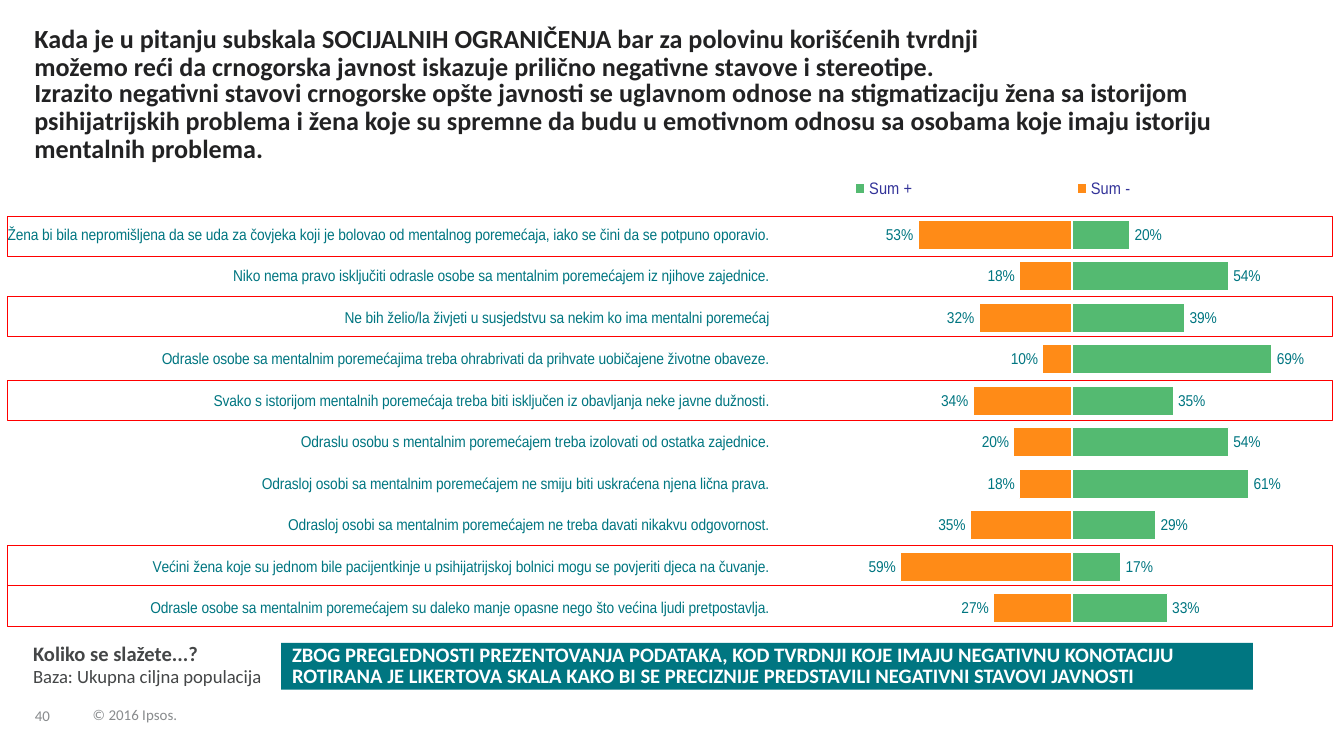
from lxml import etree
from pptx import Presentation
from pptx.chart.data import CategoryChartData
from pptx.dml.color import RGBColor
from pptx.enum.chart import XL_CHART_TYPE as CT
from pptx.enum.chart import XL_LABEL_POSITION as LP
from pptx.enum.chart import XL_LEGEND_POSITION as LEG
from pptx.enum.chart import XL_TICK_LABEL_POSITION as TLP
from pptx.enum.chart import XL_TICK_MARK as TM
from pptx.enum.shapes import MSO_SHAPE
from pptx.enum.text import MSO_ANCHOR, PP_ALIGN
from pptx.oxml.ns import qn
from pptx.util import Pt

TEAL = RGBColor(0x00, 0x76, 0x81)
GREEN = RGBColor(0x54, 0xBA, 0x71)
ORANGE = RGBColor(0xFF, 0x8B, 0x17)
NAVY = RGBColor(0x33, 0x33, 0x99)
INK = RGBColor(0x22, 0x22, 0x23)
SLATE = RGBColor(0x44, 0x46, 0x47)
GREY = RGBColor(0x88, 0x8B, 0x8D)
RED = RGBColor(0xFF, 0x00, 0x00)
WHITE = RGBColor(0xFF, 0xFF, 0xFF)

HEADING = dict(size=Pt(14), bold=True, color=INK)
QUESTION = dict(size=Pt(11), bold=True, color=SLATE)
BASE = dict(size=Pt(10), bold=False, color=SLATE)
BANNER = dict(size=Pt(11), bold=True, color=WHITE)
FOOTER = dict(size=Pt(8), bold=False, color=GREY)

TOP, MIDDLE, BOTTOM = MSO_ANCHOR.TOP, MSO_ANCHOR.MIDDLE, MSO_ANCHOR.BOTTOM

# (left, top, width, height), anchor, line spacing, wrap, lines of (text, format)
TEXTS = [
    ((18.4, 13.7, 516, 30), TOP, 0.9, True, [(
        "Kada je u pitanju subskala SOCIJALNIH OGRANIČENJA bar za polovinu "
        "korišćenih tvrdnji možemo reći da crnogorska javnost iskazuje "
        "prilično negativne stavove i stereotipe.", HEADING)]),
    ((18.4, 42.8, 684, 46), TOP, 0.9, True, [(
        "Izrazito negativni stavovi crnogorske opšte javnosti se uglavnom "
        "odnose na stigmatizaciju žena sa istorijom psihijatrijskih problema "
        "i žena koje su spremne da budu u emotivnom odnosu sa osobama koje "
        "imaju istoriju mentalnih problema.", HEADING)]),
    ((17.7, 344.5, 218, 25), TOP, 0.95, True, [
        ("Koliko se slažete...?", QUESTION),
        ("Baza: Ukupna ciljna populacija", BASE)]),
    ((18.7, 369.2, 24.5, 18.7), BOTTOM, 0.85, False, [("40", FOOTER)]),
    ((49.7, 374.4, 54.7, 13), BOTTOM, 0.85, False, [("© 2016 Ipsos.", FOOTER)]),
]
BANNER_BOX = (150.7, 344.5, 520.6, 25)
BANNER_TEXT = (
    "ZBOG PREGLEDNOSTI PREZENTOVANJA PODATAKA, KOD TVRDNJI KOJE IMAJU "
    "NEGATIVNU KONOTACIJU ROTIRANA JE LIKERTOVA SKALA KAKO BI SE PRECIZNIJE "
    "PREDSTAVILI NEGATIVNI STAVOVI JAVNOSTI")

# statement, Sum -, Sum +, top of the red frame if there is one
STATEMENTS = [
    ("Žena bi bila nepromišljena da se uda za čovjeka koji je bolovao od "
     "mentalnog poremećaja, iako se čini da se potpuno oporavio.", 53, 20, 115.8),
    ("Niko nema pravo isključiti odrasle osobe sa mentalnim poremećajem iz "
     "njihove zajednice.", 18, 54, None),
    ("Ne bih želio/la živjeti u susjedstvu sa nekim ko ima mentalni poremećaj",
     32, 39, 158.6),
    ("Odrasle osobe sa mentalnim poremećajima treba ohrabrivati da prihvate "
     "uobičajene životne obaveze.", 10, 69, None),
    ("Svako s istorijom mentalnih poremećaja treba biti isključen iz "
     "obavljanja neke javne dužnosti.", 34, 35, 203.7),
    ("Odraslu osobu s mentalnim poremećajem treba izolovati od ostatka "
     "zajednice.", 20, 54, None),
    ("Odrasloj osobi sa mentalnim poremećajem ne smiju biti uskraćena njena "
     "lična prava.", 18, 61, None),
    ("Odrasloj osobi sa mentalnim poremećajem ne treba davati nikakvu "
     "odgovornost.", 35, 29, None),
    ("Većini žena koje su jednom bile pacijentkinje u psihijatrijskoj bolnici "
     "mogu se povjeriti djeca na čuvanje.", 59, 17, 292.1),
    ("Odrasle osobe sa mentalnim poremećajem su daleko manje opasne nego što "
     "većina ljudi pretpostavlja.", 27, 33, 313.8),
]
SERIES_STYLES = [(ORANGE, '0"%";0"%"'), (GREEN, '0"%"')]
CHART_BOX = (4, 90, 725.8, 248.6)
PLOT_LAYOUT = dict(layoutTarget="inner", xMode="edge", yMode="edge",
                   x=0.513, y=0.099, w=0.488, h=0.895)
LEGEND_LAYOUT = dict(xMode="edge", yMode="edge", x=0.44, y=0.01, w=0.5, h=0.07)
FRAME_LEFT, FRAME_WIDTH, FRAME_HEIGHT = 4, 710, 21.7


def points(box):
    return [Pt(v) for v in box]


def style_font(font, color, **fmt):
    for key, value in fmt.items():
        setattr(font, key, value)
    font.color.rgb = color


def write(tf, lines, anchor, spacing, wrap=True, inset=0):
    for side in ("left", "top", "right", "bottom"):
        setattr(tf, f"margin_{side}", 0)
    tf.margin_left = Pt(inset)
    tf.vertical_anchor, tf.word_wrap = anchor, wrap
    p = tf.paragraphs[0]
    p.alignment, p.line_spacing = PP_ALIGN.LEFT, spacing
    for i, (text, fmt) in enumerate(lines):
        if i:
            p.add_line_break()
        r = p.add_run()
        r.text = text
        style_font(r.font, name="Calibri", **fmt)


def set_layout(parent, after, values):
    """Give a plot area or legend a manual layout, placed after the named child."""
    for old in parent.findall(qn("c:layout")):
        parent.remove(old)
    layout = etree.Element(qn("c:layout"))
    manual = etree.SubElement(layout, qn("c:manualLayout"))
    for key, value in values.items():
        etree.SubElement(manual, qn(f"c:{key}")).set("val", str(value))
    previous = parent.find(qn(after)) if after else None
    parent.insert(0 if previous is None else parent.index(previous) + 1, layout)


def add_rect(s, box):
    sp = s.shapes.add_shape(MSO_SHAPE.RECTANGLE, *points(box))
    sp.shadow.inherit = False
    return sp


def add_statement_chart(s):
    names, minus, plus, _ = zip(*STATEMENTS)
    data = CategoryChartData()
    data.categories = names
    data.add_series("Sum -", [-v for v in minus])
    data.add_series("Sum +", plus)
    chart = s.shapes.add_chart(CT.BAR_CLUSTERED, *points(CHART_BOX), data).chart
    chart.has_title = False
    style_font(chart.font, NAVY, name="Arial", size=Pt(9.7))

    chart.has_legend = True
    legend = chart.legend
    legend.position, legend.include_in_layout = LEG.TOP, False
    style_font(legend.font, NAVY, name="Arial", size=Pt(8.9))
    set_layout(legend._element, "c:legendPos", LEGEND_LAYOUT)

    axis = chart.category_axis
    axis.reverse_order = True
    axis.tick_label_position = TLP.LOW
    axis.major_tick_mark = TM.OUTSIDE
    axis.format.line.fill.background()
    style_font(axis.tick_labels.font, TEAL, name="Arial", size=Pt(8.4))
    body = axis._element.find(qn("c:txPr")).find(qn("a:bodyPr"))
    body.set("rot", "0")
    body.set("vert", "horz")

    values = chart.value_axis
    values.minimum_scale, values.maximum_scale = -100, 100
    values.has_major_gridlines = False
    values.visible = False

    plot = chart.plots[0]
    plot.gap_width, plot.overlap, plot.vary_by_categories = 40, 100, False
    for series, (color, number_format) in zip(plot.series, SERIES_STYLES):
        series.invert_if_negative = False
        series.format.fill.solid()
        series.format.fill.fore_color.rgb = color
        series.format.line.color.rgb = WHITE
        series.format.line.width = Pt(1)
        labels = series.data_labels
        labels.show_value, labels.position = True, LP.OUTSIDE_END
        labels.number_format, labels.number_format_is_linked = number_format, False
        style_font(labels.font, TEAL, name="Arial", size=Pt(8.4))
    set_layout(chart._chartSpace.chart.plotArea, None, PLOT_LAYOUT)


def main():
    prs = Presentation()
    prs.slide_width, prs.slide_height = Pt(720), Pt(405)
    s = prs.slides.add_slide(prs.slide_layouts[6])

    for box, anchor, spacing, wrap, lines in TEXTS:
        tf = s.shapes.add_textbox(*points(box)).text_frame
        write(tf, lines, anchor, spacing, wrap)

    add_statement_chart(s)

    banner = add_rect(s, BANNER_BOX)
    banner.fill.solid()
    banner.fill.fore_color.rgb = TEAL
    banner.line.fill.background()
    write(banner.text_frame, [(BANNER_TEXT, BANNER)], MIDDLE, 0.85, inset=5.8)

    for *_, top in STATEMENTS:
        if top is not None:
            frame = add_rect(s, (FRAME_LEFT, top, FRAME_WIDTH, FRAME_HEIGHT))
            frame.fill.background()
            frame.line.color.rgb = RED
            frame.line.width = Pt(0.25)

    prs.save("out.pptx")


if __name__ == "__main__":
    main()
